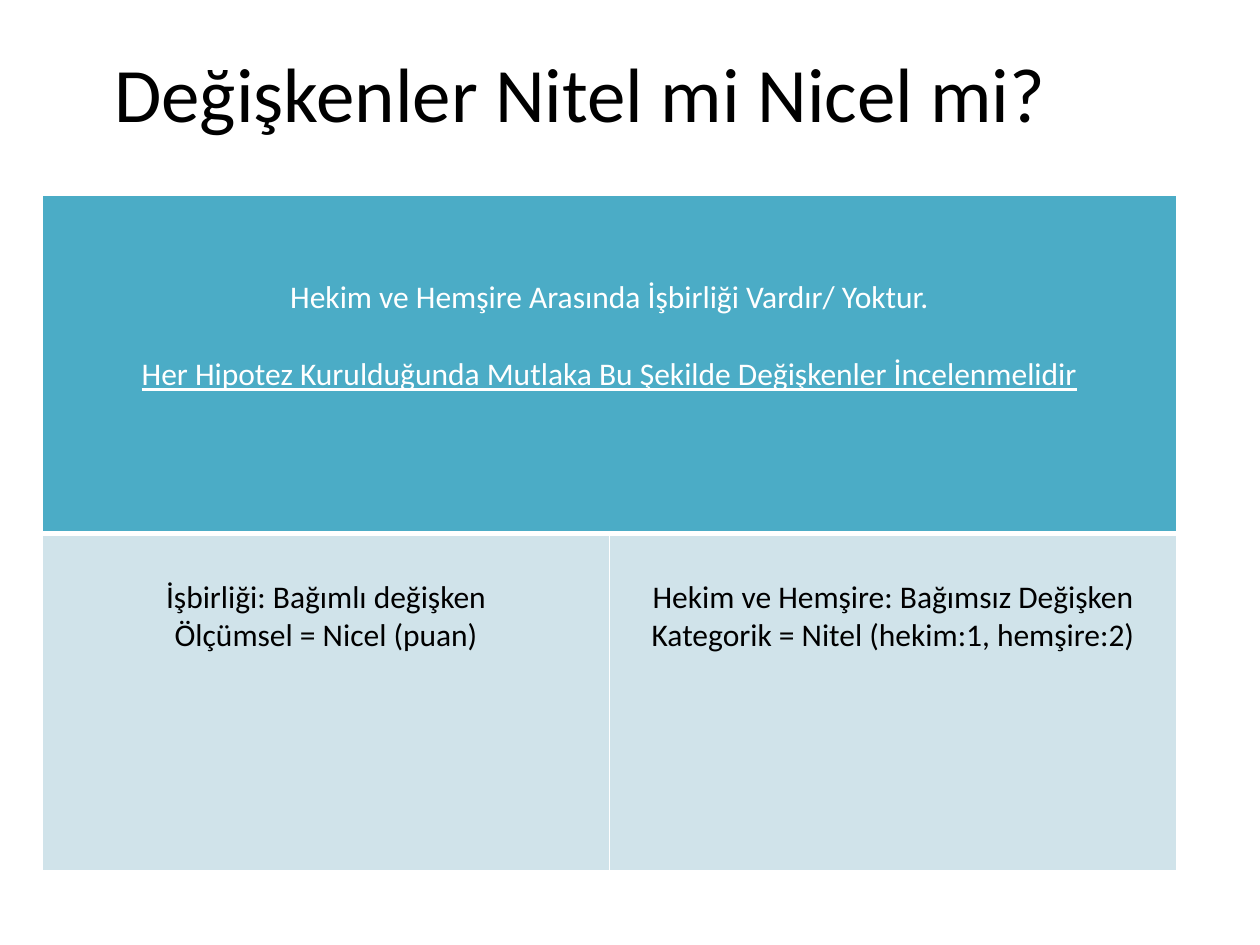
from lxml.etree import SubElement
from pptx import Presentation
from pptx.dml.color import RGBColor
from pptx.enum.text import MSO_ANCHOR, PP_ALIGN
from pptx.oxml.ns import qn
from pptx.util import Cm, Pt

TITLE = "Değişkenler Nitel mi Nicel mi?"
HYPOTHESIS = [
    ("Hekim ve Hemşire Arasında İşbirliği Vardır/ Yoktur.", False),
    ("Her Hipotez Kurulduğunda Mutlaka Bu Şekilde Değişkenler İncelenmelidir", True),
]
VARIABLES = [
    [("İşbirliği: Bağımlı değişken", False), ("Ölçümsel = Nicel (puan)", False)],
    [("Hekim ve Hemşire: Bağımsız Değişken", False),
     ("Kategorik = Nitel (hekim:1, hemşire:2)", False)],
]
THEME = {
    "font": "Calibri", "title_size": Pt(44), "cell_size": Pt(18), "line": Pt(22),
    "black": "000000", "white": "FFFFFF", "header": "4BACC6", "body": "D0E3EA",
    "thin": Pt(1), "thick": Pt(3),
}
TITLE_BOX = {"left": Cm(0.76), "top": Cm(0), "width": Cm(21.89), "height": Cm(3.68)}
TABLE_BOX = {"left": Cm(0.86), "top": Cm(3.94), "width": Cm(22.86), "height": Cm(13.62)}
SIDE_MARGIN, EDGE_MARGIN = Cm(0.18), Cm(0.13)


def apply(target, values):
    for name, value in values.items():
        setattr(target, name, value)


def write(paragraph, text, size, color, underline=False):
    paragraph.alignment = PP_ALIGN.CENTER
    run = paragraph.add_run()
    run.text = text
    apply(run.font, {"name": THEME["font"], "size": size, "bold": False,
                     "underline": underline})
    run.font.color.rgb = RGBColor.from_string(color)


def add_borders(cell, widths):
    properties = cell._tc.get_or_add_tcPr()
    for index, (side, width) in enumerate(widths.items()):
        line = SubElement(properties, qn(f"a:ln{side}"), w=str(int(width)))
        fill = SubElement(line, qn("a:solidFill"))
        SubElement(fill, qn("a:srgbClr"), val=THEME["white"])
        properties.insert(index, line)


def fill_cell(cell, lines, fill, color, lines_above, gap, borders):
    apply(cell, {"margin_left": SIDE_MARGIN, "margin_right": SIDE_MARGIN,
                 "margin_top": EDGE_MARGIN + lines_above * THEME["line"],
                 "margin_bottom": EDGE_MARGIN, "vertical_anchor": MSO_ANCHOR.TOP})
    cell.fill.solid()
    cell.fill.fore_color.rgb = RGBColor.from_string(fill)
    frame = cell.text_frame
    for index, (text, underline) in enumerate(lines):
        paragraph = frame.add_paragraph() if index else frame.paragraphs[0]
        paragraph.space_before = gap if index else Pt(0)
        write(paragraph, text, THEME["cell_size"], color, underline)
    add_borders(cell, borders)


def main():
    presentation = Presentation()
    apply(presentation, {"slide_width": Cm(25.4), "slide_height": Cm(19.05)})
    slide = presentation.slides.add_slide(presentation.slide_layouts[5])

    title = slide.shapes.title
    apply(title, TITLE_BOX)
    title.text_frame.vertical_anchor = MSO_ANCHOR.MIDDLE
    write(title.text_frame.paragraphs[0], TITLE, THEME["title_size"], THEME["black"])

    table = slide.shapes.add_table(2, len(VARIABLES), **TABLE_BOX).table
    apply(table, {"first_row": False, "horz_banding": False})
    table.cell(0, 0).merge(table.cell(0, len(VARIABLES) - 1))

    thin, thick = THEME["thin"], THEME["thick"]
    fill_cell(table.cell(0, 0), HYPOTHESIS, THEME["header"], THEME["white"], 2,
              THEME["line"], {"L": thin, "R": thin, "T": thin, "B": thick})
    for column, lines in enumerate(VARIABLES):
        fill_cell(table.cell(1, column), lines, THEME["body"], THEME["black"], 1,
                  Pt(0), {"L": thin, "R": thin, "T": thick, "B": thin})

    presentation.save("out.pptx")


if __name__ == "__main__":
    main()
